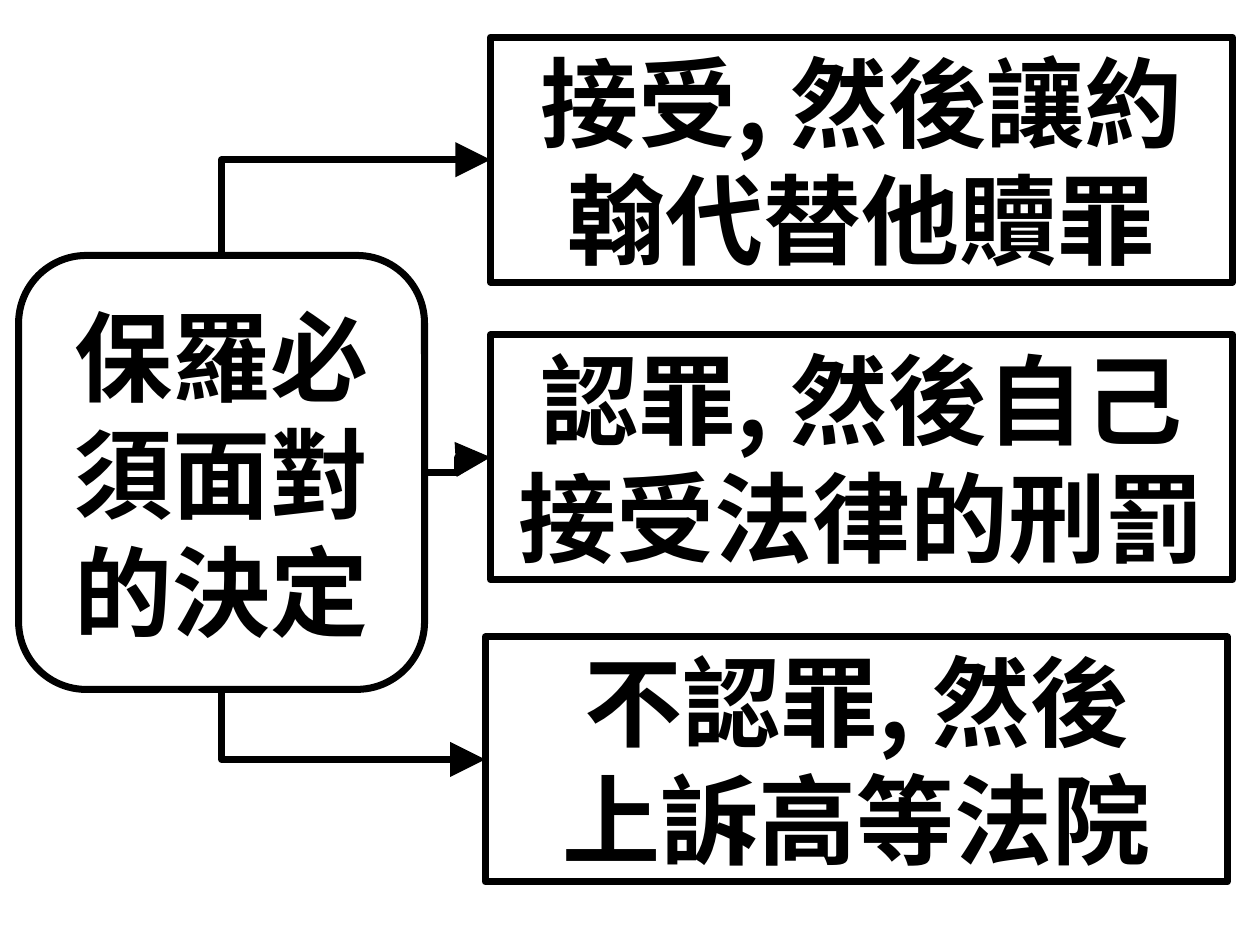
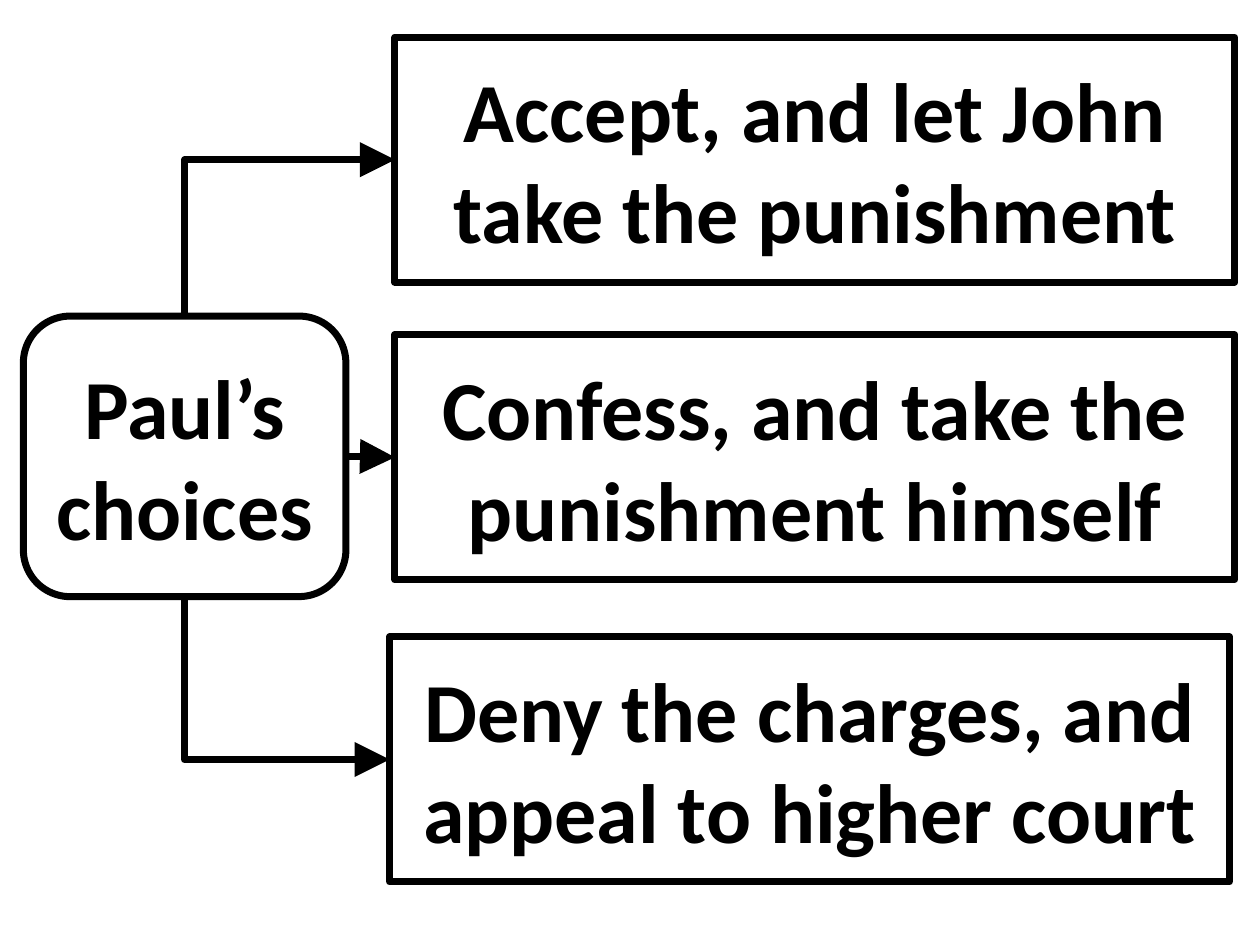
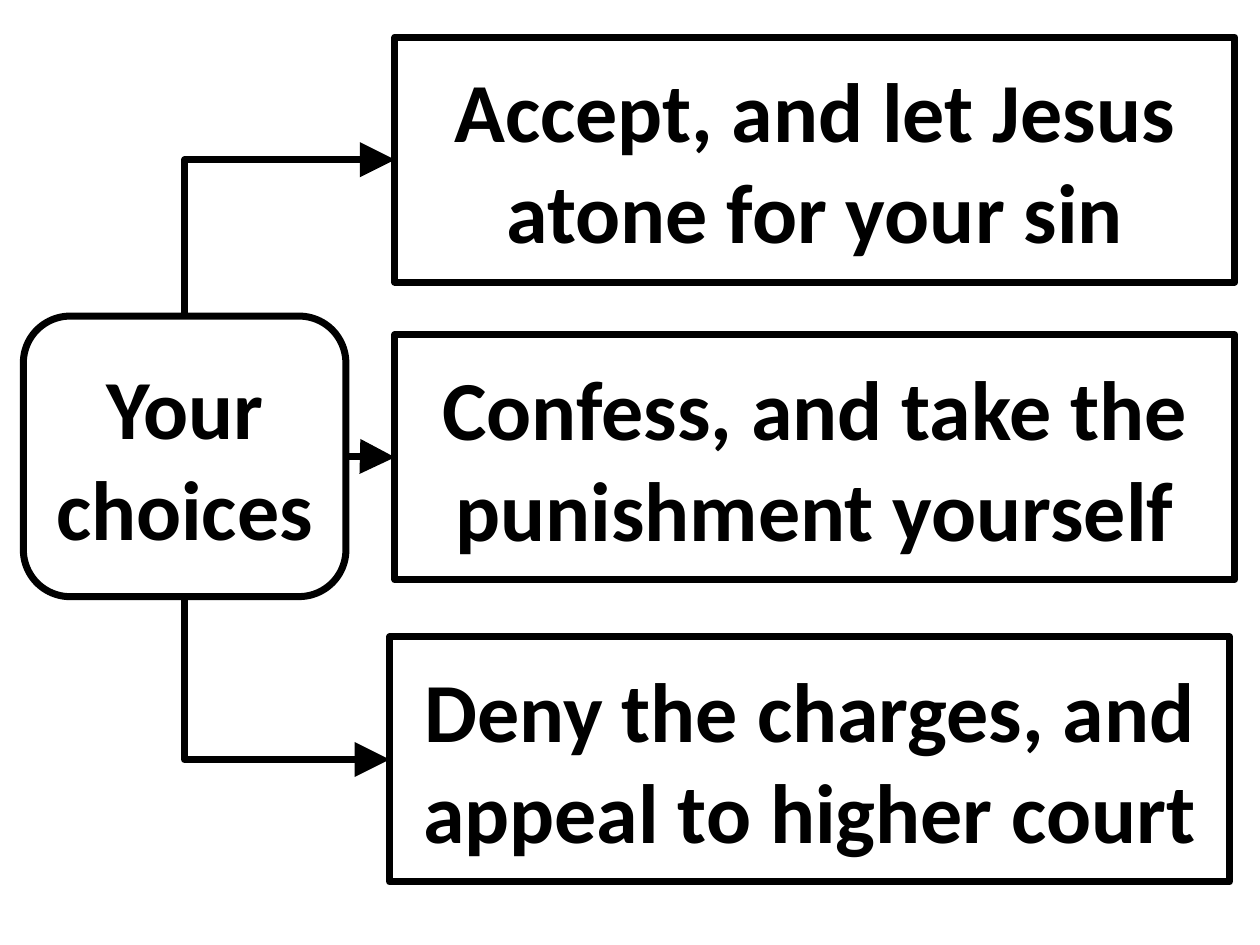
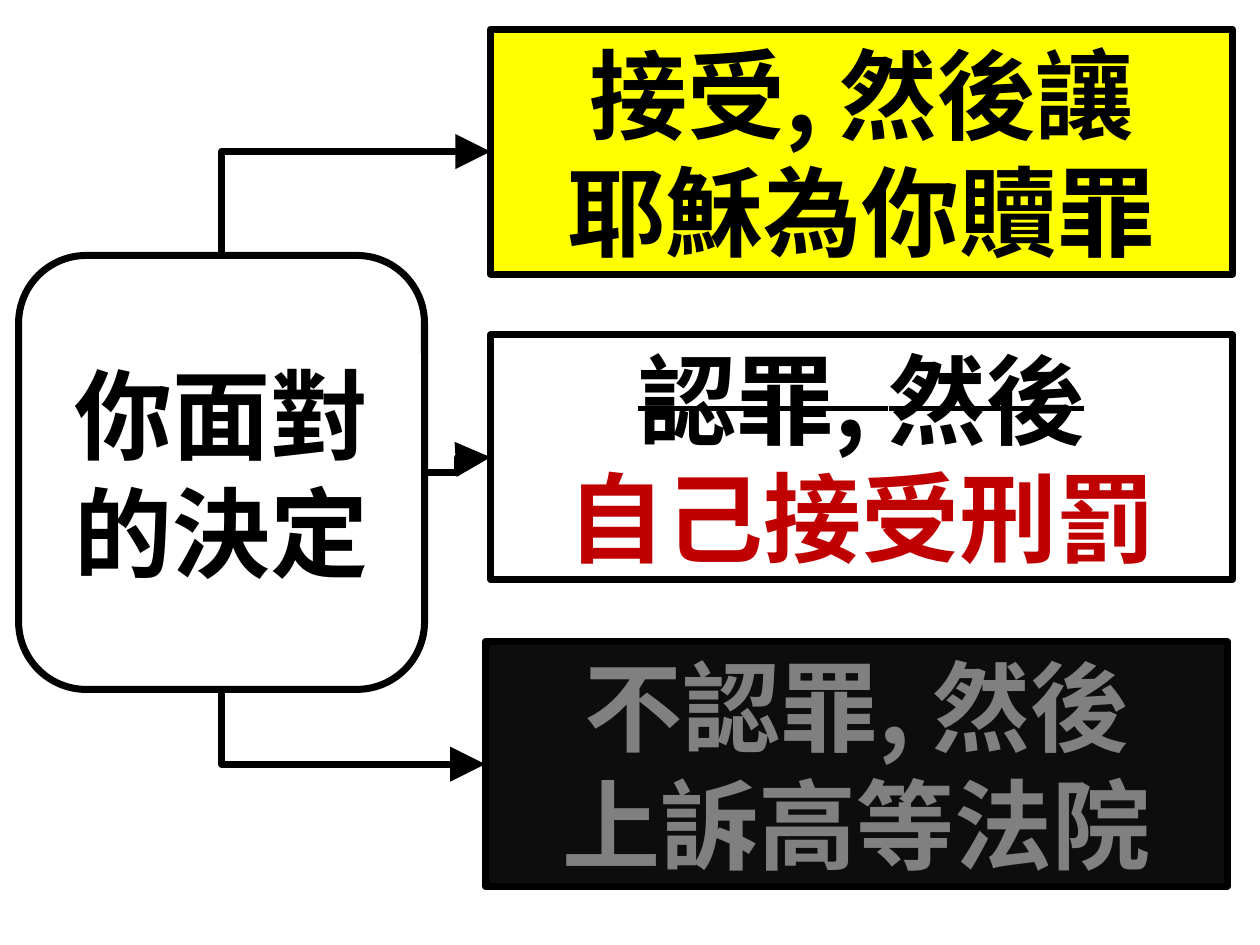
from lxml.etree import SubElement
from pptx import Presentation
from pptx.dml.color import RGBColor
from pptx.enum.shapes import MSO_CONNECTOR, MSO_SHAPE
from pptx.enum.text import MSO_ANCHOR, PP_ALIGN
from pptx.oxml.ns import qn
from pptx.util import Pt

BLACK, RED, GREY = "000000", "C00000", "808080"
YELLOW, DARK = "FFFF00", "0D0D0D"
HIGH, MID, LOW = 16, 143.5, 273
TALL = 105

hanzi = {"font": "Noto Sans CJK TC", "size": 42, "root": (8, 109.5, 174, 186), "left": 210.25, "wide": 318}
latin = {"font": "Calibri", "size": 36, "root": (10, 135.5, 138.25, 120.25), "left": 169.25, "wide": 360}


def paint(item, code):
    item.solid() if hasattr(item, "solid") else None
    target = item.fore_color if hasattr(item, "fore_color") else item.color
    target.rgb = RGBColor.from_string(code)


def add_box(slide, kind, frame, lines, look, fill=None):
    box = slide.shapes.add_shape(kind, *[Pt(n) for n in frame])
    box.shadow.inherit = False
    if fill:
        paint(box.fill, fill)
    else:
        box.fill.background()
    paint(box.line, BLACK)
    box.line.width = Pt(3)
    text = box.text_frame
    text.word_wrap = True
    text.vertical_anchor = MSO_ANCHOR.MIDDLE
    for i, (words, code, struck) in enumerate(lines):
        para = text.add_paragraph() if i else text.paragraphs[0]
        para.alignment = PP_ALIGN.CENTER
        run = para.add_run()
        run.text = words
        font = run.font
        font.name, font.size, font.bold = look["font"], Pt(look["size"]), True
        paint(font, code)
        props = run._r.get_or_add_rPr()
        SubElement(props, qn("a:ea")).set("typeface", look["font"])
        if struck:
            props.set("strike", "sngStrike")
    return box


deny = [("Deny the charges, and appeal to higher court", BLACK, False)]
pages = [
    (hanzi, "保羅必須面對的決定", [
        (HIGH, None, [("接受, 然後讓約翰代替他贖罪", BLACK, False)]),
        (MID, None, [("認罪, 然後自己", BLACK, False), ("接受法律的刑罰", BLACK, False)]),
        (LOW, None, [("不認罪, 然後", BLACK, False), ("上訴高等法院", BLACK, False)]),
    ]),
    (latin, "Paul’s choices", [
        (HIGH, None, [("Accept, and let John take the punishment", BLACK, False)]),
        (MID, None, [("Confess, and take the punishment himself", BLACK, False)]),
        (LOW, None, deny),
    ]),
    (latin, "Your choices", [
        (HIGH, None, [("Accept, and let Jesus atone for your sin", BLACK, False)]),
        (MID, None, [("Confess, and take the punishment yourself", BLACK, False)]),
        (LOW, None, deny),
    ]),
    (hanzi, "你面對的決定", [
        (12.5, YELLOW, [("接受, 然後讓", BLACK, False), ("耶穌為你贖罪", BLACK, False)]),
        (MID, None, [("認罪, 然後", BLACK, True), ("自己接受刑罰", RED, False)]),
        (275, DARK, [("不認罪, 然後", GREY, False), ("上訴高等法院", GREY, False)]),
    ]),
]
shifts = [0, 0, -2.25]
sites = [0, 3, 2]
turns = [(90, True, True), None, (270, True, False)]

deck = Presentation()
deck.slide_width, deck.slide_height = Pt(540), Pt(405)

for look, title, picks in pages:
    slide = deck.slides.add_slide(deck.slide_layouts[6])
    root = add_box(slide, MSO_SHAPE.ROUNDED_RECTANGLE, look["root"], [(title, BLACK, False)], look)
    for (top, fill, lines), shift, site, turn in zip(picks, shifts, sites, turns):
        frame = (look["left"] + shift, top, look["wide"], TALL)
        box = add_box(slide, MSO_SHAPE.RECTANGLE, frame, lines, look, fill)

        link = slide.shapes.add_connector(MSO_CONNECTOR.ELBOW, 0, 0, 0, 0)
        link.begin_connect(root, site)
        link.end_connect(box, 1)
        props = link._element.spPr
        if turn:
            wide, high = link.width, link.height
            link.left += (wide - high) // 2
            link.top += (high - wide) // 2
            link.width, link.height = high, wide
            xfrm = props.get_or_add_xfrm()
            xfrm.rot, xfrm.flipH, xfrm.flipV = turn
            props.find(qn("a:prstGeom")).set("prst", "bentConnector2")
        paint(link.line, BLACK)
        link.line.width = Pt(3)
        tip = SubElement(props.find(qn("a:ln")), qn("a:tailEnd"))
        for key, value in (("type", "triangle"), ("w", "lg"), ("len", "lg")):
            tip.set(key, value)
        SubElement(props, qn("a:effectLst"))

deck.save("out.pptx")
